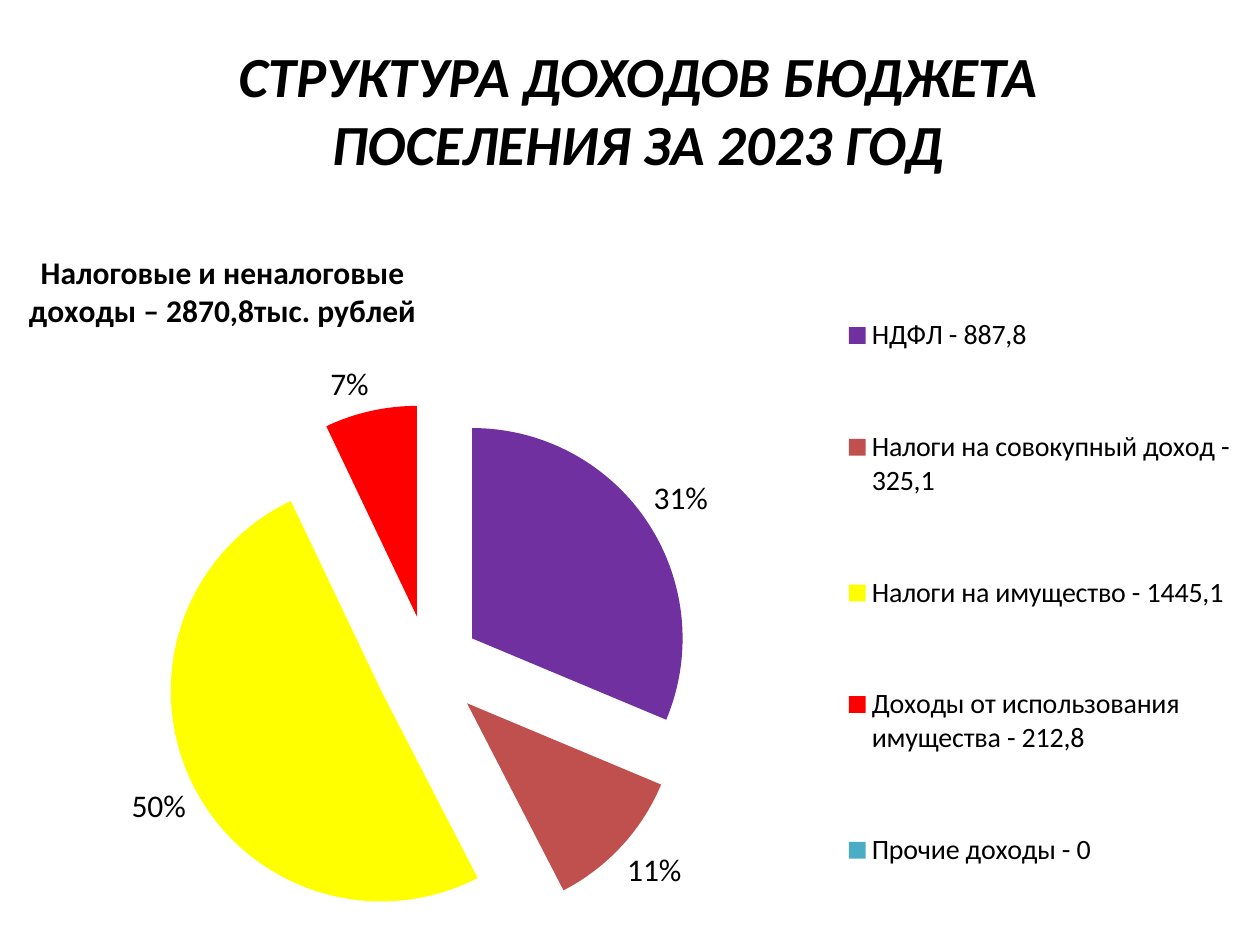
"""Build the slide on the structure of the settlement's budget revenue."""
from lxml import etree
from pptx import Presentation
from pptx.chart.data import CategoryChartData
from pptx.dml.color import RGBColor
from pptx.enum.chart import XL_CHART_TYPE as ChartType, XL_LABEL_POSITION as LabelPos
from pptx.enum.chart import XL_LEGEND_POSITION as LegendPos
from pptx.enum.text import MSO_ANCHOR, PP_ALIGN
from pptx.oxml import parse_xml
from pptx.oxml.ns import nsdecls, qn
from pptx.util import Pt

PX = 914400 // 126
FONT = "Calibri"
BLACK = RGBColor(0x00, 0x00, 0x00)
PURPLE = RGBColor(0x70, 0x30, 0xA0)
BRICK = RGBColor(0xC0, 0x50, 0x4D)
YELLOW = RGBColor(0xFF, 0xFF, 0x00)
RED = RGBColor(0xFF, 0x00, 0x00)
TEAL = RGBColor(0x4B, 0xAC, 0xC6)

HEADING = "СТРУКТУРА ДОХОДОВ БЮДЖЕТА ПОСЕЛЕНИЯ ЗА 2023 ГОД"
CAPTION = "Налоговые и неналоговые\nдоходы – 2870,8тыс. рублей"
INCOMES = [
    ("НДФЛ - 887,8", 31, PURPLE),
    ("Налоги на совокупный доход - 325,1", 11, BRICK),
    ("Налоги на имущество - 1445,1", 50, YELLOW),
    ("Доходы от использования имущества - 212,8", 7, RED),
    ("Прочие доходы - 0", 0, TEAL),
]
HEADING_BOX = (104, 36, 1068, 145)
CHART_BOX = (0, 234, 1260, 711)
CAPTION_LAYOUT = {"x": 0.02, "y": 0.02}
PIE_LAYOUT = {"layoutTarget": "inner", "x": 0.13, "y": 0.24, "w": 0.42, "h": 0.74}
LEGEND_LAYOUT = {"x": 0.66, "y": 0.01, "w": 0.33, "h": 0.99}
EXPLOSION = 25


def emu(box):
    return [length * PX for length in box]


def style(font, size, bold=False, italic=False):
    font.name, font.size, font.bold, font.italic = FONT, Pt(size), bold, italic
    font.color.rgb = BLACK


def place(part, values, follower):
    for old in part.findall(qn("c:layout")):
        part.remove(old)
    layout = parse_xml(f"<c:layout {nsdecls('c')}><c:manualLayout/></c:layout>")
    target = {key: val for key, val in values.items() if key == "layoutTarget"}
    modes = {"xMode": "edge", "yMode": "edge"}
    for key, val in {**target, **modes, **values}.items():
        etree.SubElement(layout[0], qn(f"c:{key}")).set("val", str(val))
    part.find(qn(f"c:{follower}")).addprevious(layout)


def add_heading(slide):
    frame = slide.shapes.add_textbox(*emu(HEADING_BOX)).text_frame
    frame.word_wrap = True
    frame.vertical_anchor = MSO_ANCHOR.MIDDLE
    frame.text = HEADING
    frame.paragraphs[0].alignment = PP_ALIGN.CENTER
    style(frame.paragraphs[0].runs[0].font, 32.4, bold=True, italic=True)


def add_pie(slide):
    names, shares, colours = zip(*INCOMES)
    data = CategoryChartData()
    data.categories = names
    data.add_series("Series 1", shares)
    chart = slide.shapes.add_chart(ChartType.PIE, *emu(CHART_BOX), data).chart
    style(chart.font, 18)

    caption = chart.chart_title
    caption.text_frame.text = CAPTION
    for paragraph in caption.text_frame.paragraphs:
        paragraph.alignment = PP_ALIGN.CENTER
        style(paragraph.runs[0].font, 18, bold=True)
    caption.include_in_layout = False

    chart.has_legend = True
    legend = chart.legend
    legend.position = LegendPos.RIGHT
    legend.include_in_layout = False
    style(legend.font, 16)

    pie = chart.plots[0]
    pie.vary_by_categories = True
    pie.has_data_labels = True
    labels = pie.data_labels
    labels.show_percentage, labels.show_value = False, True
    labels.number_format, labels.number_format_is_linked = '0"%"', False
    labels.position = LabelPos.OUTSIDE_END
    style(labels.font, 18)

    series = pie.series[0]
    for index, colour in enumerate(colours):
        fill = series.points[index].format.fill
        fill.solid()
        fill.fore_color.rgb = colour
    explosion = parse_xml(f'<c:explosion {nsdecls("c")} val="{EXPLOSION}"/>')
    series._element.find(qn("c:dPt")).addprevious(explosion)

    shared = labels._element
    shared.insert(0, parse_xml(
        f'<c:dLbl {nsdecls("c")}><c:idx val="{shares.index(0)}"/><c:delete val="1"/></c:dLbl>'))
    series._element.find(qn("c:cat")).addprevious(shared)

    place(caption._element, CAPTION_LAYOUT, "overlay")
    place(legend._element, LEGEND_LAYOUT, "overlay")
    place(pie._element.getparent(), PIE_LAYOUT, "pieChart")


def main():
    deck = Presentation()
    deck.slide_width, deck.slide_height = emu((1260, 945))
    slide = deck.slides.add_slide(deck.slide_layouts[6])
    add_heading(slide)
    add_pie(slide)
    deck.save("out.pptx")


if __name__ == "__main__":
    main()
